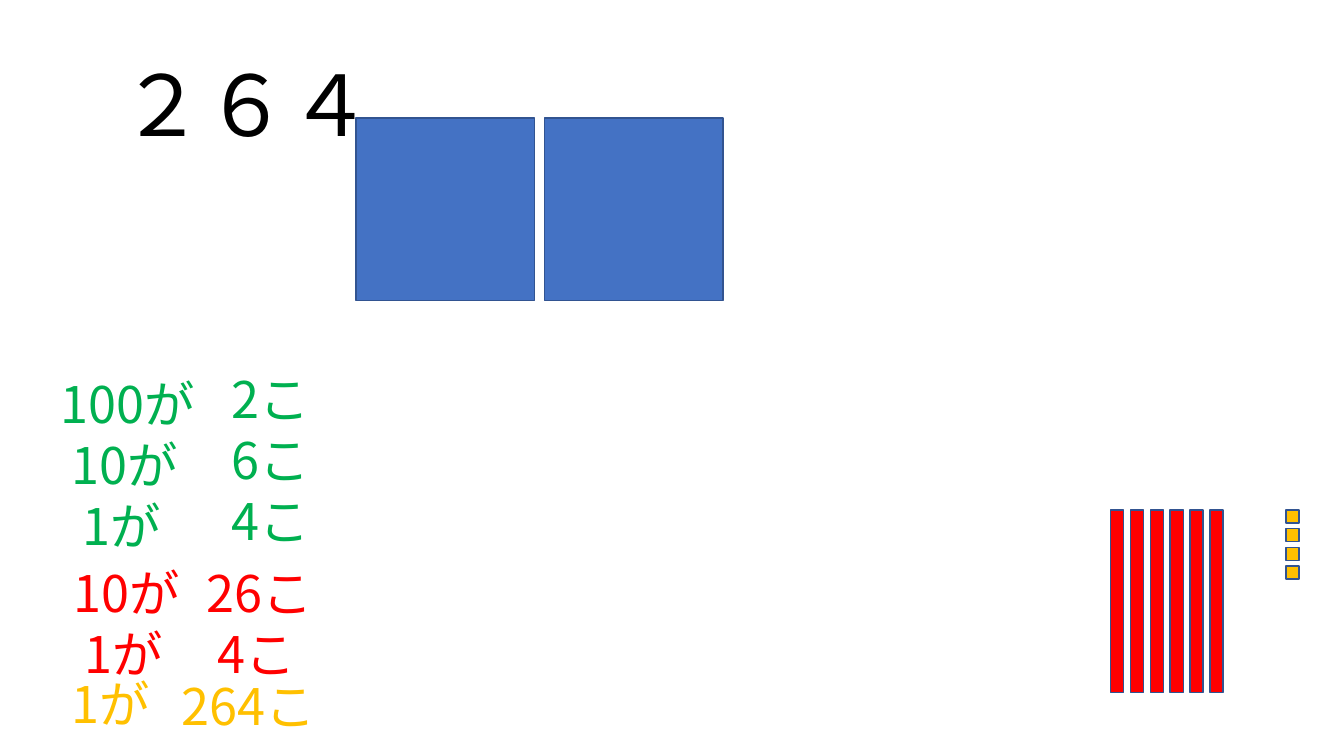
import pptx
import pptx.dml.color
import pptx.enum.shapes
import pptx.enum.text
import pptx.oxml.ns
import pptx.util
from lxml import etree

Cm = pptx.util.Cm
Pt = pptx.util.Pt

FONT = "Noto Sans CJK JP"
COLORS = {
    "number": "000000",
    "hundred": "4472C4",
    "ten": "FF0000",
    "one": "FFC000",
    "outline": "325491",
    "by_place": "00B050",
    "by_tens": "FF0000",
    "by_ones": "FFC000",
}
INDENT_STEP = 0.28
COUNT_SIZE = 36


def color(name):
    return pptx.dml.color.RGBColor.from_string(COLORS[name])


def add_lines(slide, box, lines, size, color_name):
    left, top, width, height = box
    frame = slide.shapes.add_textbox(Cm(left), Cm(top), Cm(width), Cm(height)).text_frame
    frame.word_wrap = True
    frame.auto_size = pptx.enum.text.MSO_AUTO_SIZE.NONE
    frame.margin_top = Cm(0.13) + Pt(0.07 * size)
    frame.text = "\n".join(words for words, indent in lines)
    for paragraph, (words, indent) in zip(frame.paragraphs, lines):
        paragraph.line_spacing = Pt(round(1.21 * size, 1))
        paragraph._p.get_or_add_pPr().set("marL", str(Cm(indent)))
        for run in paragraph.runs:
            run.font.size = Pt(size)
            run.font.name = FONT
            run.font.color.rgb = color(color_name)
            east_asian = etree.SubElement(run.font._element, pptx.oxml.ns.qn("a:ea"))
            east_asian.set("typeface", FONT)


def add_block(slide, left, top, width, height, color_name):
    block = slide.shapes.add_shape(
        pptx.enum.shapes.MSO_SHAPE.RECTANGLE, Cm(left), Cm(top), Cm(width), Cm(height))
    block.shadow.inherit = False
    block.fill.solid()
    block.fill.fore_color.rgb = color(color_name)
    block.line.color.rgb = color("outline")
    block.line.width = Pt(1)


def add_blocks(slide, box, count, step, color_name):
    left, top, width, height = box
    step_x, step_y = step
    for i in range(count):
        add_block(slide, left + i * step_x, top + i * step_y, width, height, color_name)


def add_counts(slide, left, top, units, counts, color_name, count_left, count_top):
    for column_left, column_top, column in ((count_left, count_top, counts), (left, top, units)):
        lines = [(words, steps * INDENT_STEP) for words, steps in column]
        height = 0.26 + 1.54 * len(lines)
        add_lines(slide, (column_left, column_top, 5.08, height), lines, COUNT_SIZE, color_name)


def build_place_value_slide(slide):
    add_lines(slide, (0.66, 1.02, 8.99, 2.82), [("２６４", 2.12)], 60, "number")
    add_blocks(slide, (8.97, 2.97, 4.5, 4.6), 2, (4.75, 0), "hundred")
    add_blocks(slide, (27.99, 12.85, 0.33, 4.6), 6, (0.5, 0), "ten")
    add_blocks(slide, (32.41, 12.85, 0.33, 0.33), 4, (0, 0.47), "one")
    add_counts(slide, 0.99, 9.17, [("100が", 1), ("10が", 2), ("1が", 3)],
               [("2こ", 1), ("6こ", 1), ("4こ", 1)], "by_place", 5.31, 9.04)
    add_counts(slide, 1.04, 13.94, [("10が", 2), ("1が", 3)],
               [("26こ", 1), ("4こ", 2)], "by_tens", 4.67, 13.94)
    add_counts(slide, 0.99, 16.74, [("1が", 2)],
               [("264こ", 1)], "by_ones", 4.04, 16.79)


def main():
    deck = pptx.Presentation()
    deck.slide_width = Cm(33.87)
    deck.slide_height = Cm(19.05)
    build_place_value_slide(deck.slides.add_slide(deck.slide_layouts[6]))
    deck.save("out.pptx")


if __name__ == "__main__":
    main()
